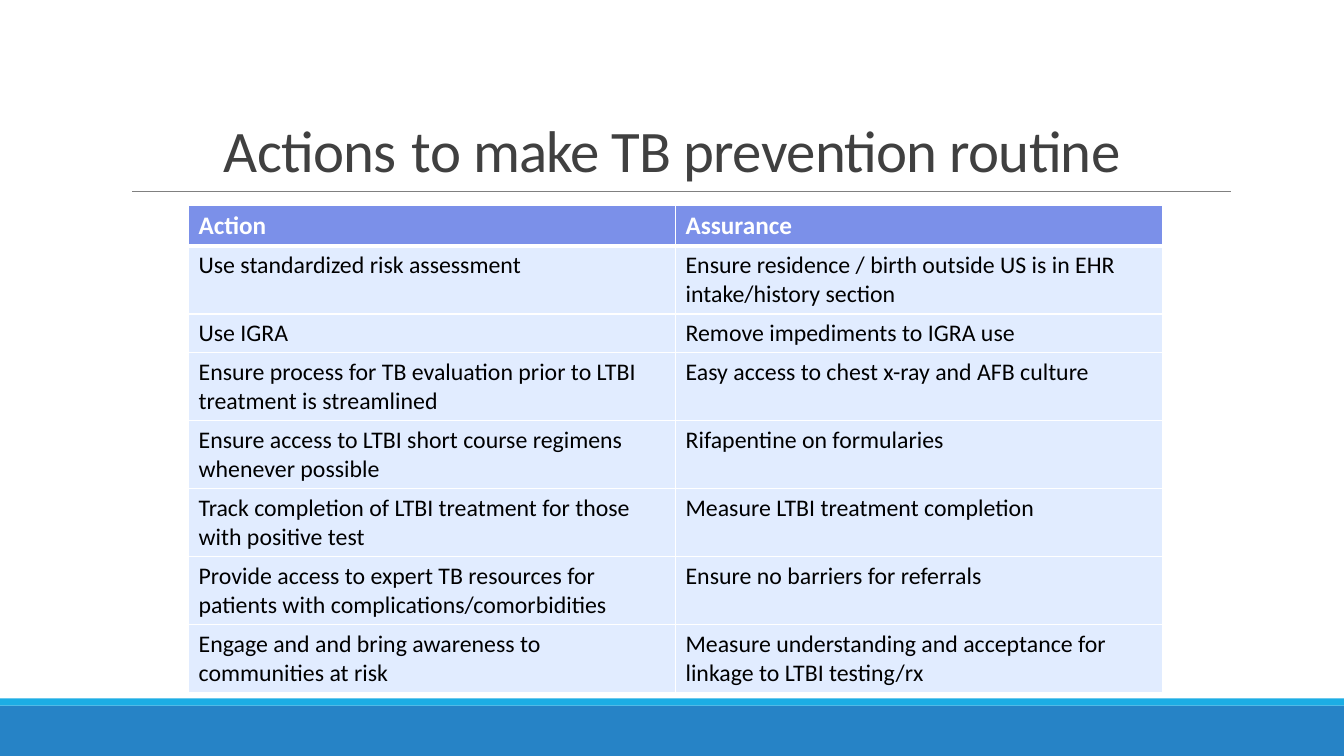
from lxml import etree
from pptx import Presentation
from pptx.dml.color import RGBColor
from pptx.enum.shapes import MSO_CONNECTOR, MSO_SHAPE
from pptx.enum.text import MSO_ANCHOR, PP_ALIGN
from pptx.oxml.ns import qn
from pptx.util import Inches, Pt

RECTANGLE = MSO_SHAPE.RECTANGLE
STRAIGHT = MSO_CONNECTOR.STRAIGHT
BOTTOM = MSO_ANCHOR.BOTTOM
CENTER = PP_ALIGN.CENTER

# Content
TITLE = [("Actions", 42), (" ", 48), ("to make TB prevention routine", 42)]
ACTIONS = [
    ("Action", "Assurance"),
    ("Use standardized risk assessment",
     "Ensure residence / birth outside US is in EHR intake/history section"),
    ("Use IGRA", "Remove impediments to IGRA use"),
    ("Ensure process for TB evaluation prior to LTBI treatment is streamlined",
     "Easy access to chest x-ray and AFB culture"),
    ("Ensure access to LTBI short course regimens whenever possible",
     "Rifapentine on formularies"),
    ("Track completion of LTBI treatment for those with positive test",
     "Measure LTBI treatment completion"),
    ("Provide access to expert TB resources for patients with complications/comorbidities",
     "Ensure no barriers for referrals"),
    ("Engage and and bring awareness to communities at risk",
     "Measure understanding and acceptance for linkage to LTBI testing/rx"),
]

# Format
FONT = "Calibri"
WIDTH, HEIGHT = 13.33, 7.5
FOOTER_BARS = [(7.0, 0.5, "2683C6"), (6.93, 0.07, "1CADE4")]  # top, height, fill
HEADER = {"size": Pt(18), "bold": True, "color": "FFFFFF", "fill": "7B90E9"}
BODY = {"size": Pt(17), "bold": False, "color": "000000", "fill": "E1ECFF"}
COLUMN_WIDTH = 4.83
ONE_LINE, TWO_LINES = 0.38, 0.675
LINE_CAPACITY = 45  # characters that fit on one line of a cell


def rgb(value):
    return RGBColor.from_string(value)


def style_font(font, color, **values):
    font.color.rgb = rgb(color)
    for name, value in {"name": FONT, **values}.items():
        setattr(font, name, value)


def add_borders(cell, weights):
    properties = cell._tc.get_or_add_tcPr()
    for side, weight in weights.items():
        border = etree.SubElement(properties, qn(f"a:ln{side}"), w=str(Pt(weight)))
        fill = etree.SubElement(border, qn("a:solidFill"))
        etree.SubElement(fill, qn("a:srgbClr"), val="FFFFFF")


prs = Presentation()
prs.slide_width, prs.slide_height = Inches(WIDTH), Inches(HEIGHT)
slide = prs.slides.add_slide(prs.slide_layouts[6])
shapes = slide.shapes

# Footer bars
for top, height, color in FOOTER_BARS:
    bar = shapes.add_shape(RECTANGLE, 0, Inches(top), Inches(WIDTH), Inches(height))
    bar.shadow.inherit = False
    bar.fill.solid()
    bar.fill.fore_color.rgb = rgb(color)
    bar.line.fill.background()

# Rule under the title
rule = shapes.add_connector(STRAIGHT, Inches(1.31), Inches(1.9), Inches(12.21), Inches(1.9))
rule.line.color.rgb = rgb("808080")
rule.line.width = Pt(0.5)
etree.SubElement(rule._element.spPr, qn("a:effectLst"))

# Title
title = shapes.add_textbox(0, Inches(0.31), Inches(WIDTH), Inches(1.59)).text_frame
title.word_wrap = True
title.vertical_anchor = BOTTOM
heading = title.paragraphs[0]
heading.alignment = CENTER
heading.line_spacing = 0.85
for text, size in TITLE:
    run = heading.add_run()
    run.text = text
    style_font(run.font, "404040", size=Pt(size))
    run._r.get_or_add_rPr().set("spc", "-50")

# Table: a row is as tall as its longest cell needs
row_heights = [TWO_LINES if max(map(len, row)) > LINE_CAPACITY else ONE_LINE
               for row in ACTIONS]
table = shapes.add_table(len(ACTIONS), 2, Inches(1.87), Inches(2.04),
                         Inches(2 * COLUMN_WIDTH), Inches(sum(row_heights))).table
for column in table.columns:
    column.width = Inches(COLUMN_WIDTH)
for r, (row, height) in enumerate(zip(ACTIONS, row_heights)):
    table.rows[r].height = Inches(height)
    look = BODY if r else HEADER
    weights = {"L": 1, "R": 1, "T": 3 if r == 1 else 1, "B": 1 if r else 3}
    for c, text in enumerate(row):
        cell = table.cell(r, c)
        add_borders(cell, weights)
        cell.fill.solid()
        cell.fill.fore_color.rgb = rgb(look["fill"])
        run = cell.text_frame.paragraphs[0].add_run()
        run.text = text
        style_font(run.font, look["color"], size=look["size"], bold=look["bold"])

prs.save("out.pptx")
